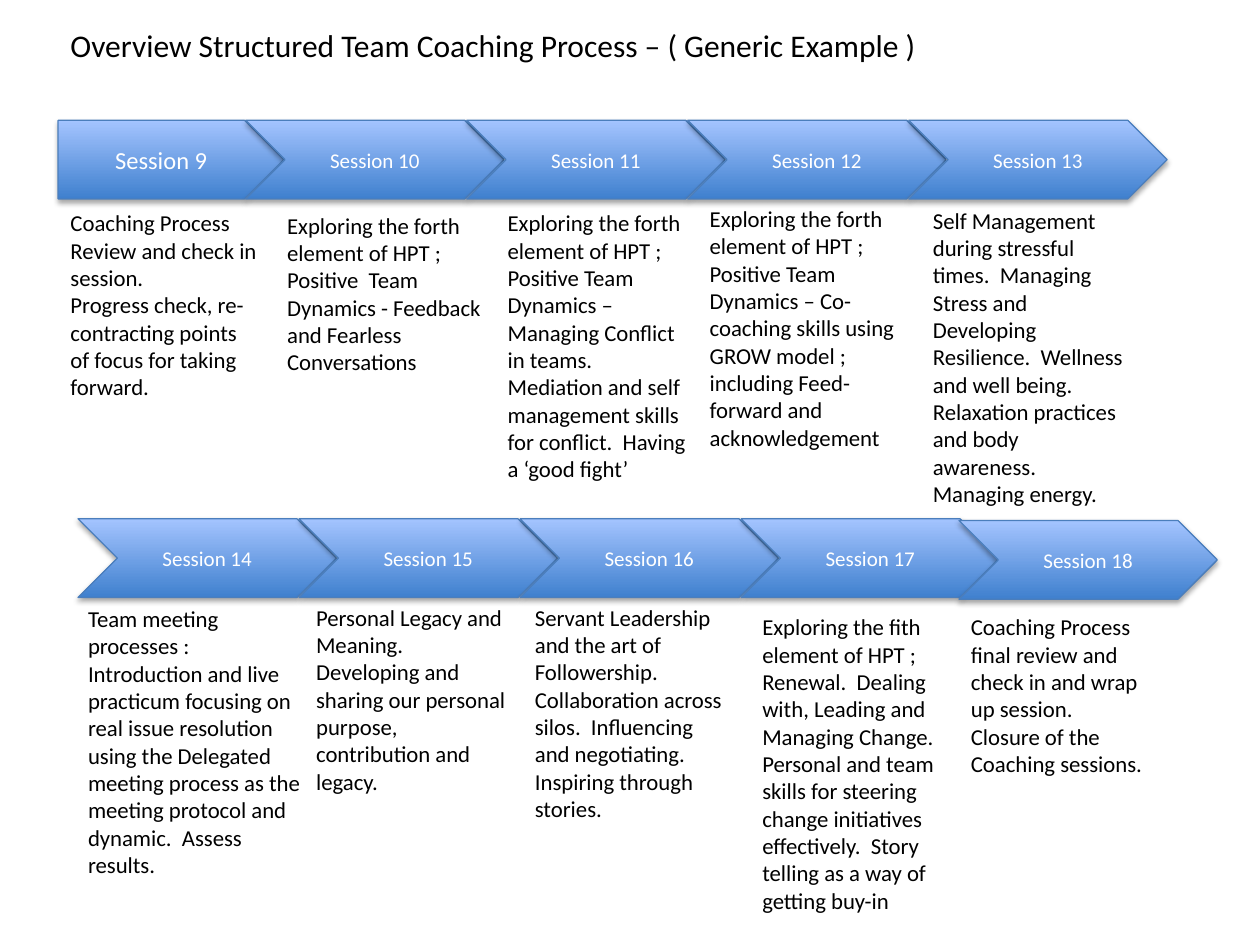
from pptx import Presentation
from pptx.dml.color import RGBColor
from pptx.enum.shapes import MSO_SHAPE
from pptx.enum.text import MSO_ANCHOR, PP_ALIGN
from pptx.oxml import parse_xml
from pptx.oxml.ns import nsdecls
from pptx.util import Pt

COLORS = {"dark": "3F80CE", "light": "A4C4FF", "edge": "4B7EBC",
          "text": "000000", "label": "FFFFFF"}
SHADOW = (
    f'<a:effectLst {nsdecls("a")}>'
    '<a:outerShdw blurRad="39400" dist="22900" dir="5400000" rotWithShape="0">'
    '<a:srgbClr val="000000"><a:alpha val="35000"/></a:srgbClr>'
    '</a:outerShdw></a:effectLst>')


def write(frame, lines, size, color, align=PP_ALIGN.LEFT):
    """Fill a text frame with one paragraph per line."""
    for i, line in enumerate(lines):
        para = frame.paragraphs[0] if i == 0 else frame.add_paragraph()
        para.alignment = align
        run = para.add_run()
        run.text = line
        run.font.name = "Calibri"
        run.font.size = Pt(size)
        run.font.color.rgb = RGBColor.from_string(COLORS[color])


def add_arrow(kind, left, top, width, label, size):
    arrow = slide.shapes.add_shape(kind, Pt(left), Pt(top), Pt(width), Pt(HIGH))
    arrow.fill.gradient()
    arrow.fill.gradient_angle = 90
    for stop, name in zip(arrow.fill.gradient_stops, ("dark", "light")):
        stop.color.rgb = RGBColor.from_string(COLORS[name])
    arrow.line.color.rgb = RGBColor.from_string(COLORS["edge"])
    arrow.line.width = Pt(0.75)
    arrow._element.spPr.append(parse_xml(SHADOW))
    arrow.text_frame.word_wrap = True
    arrow.text_frame.vertical_anchor = MSO_ANCHOR.MIDDLE
    write(arrow.text_frame, [label], size, "label", PP_ALIGN.CENTER)


prs = Presentation()
prs.slide_width, prs.slide_height = Pt(720), Pt(540)
slide = prs.slides.add_slide(prs.slide_layouts[6])

title = slide.shapes.add_textbox(Pt(33.2), Pt(11.5), Pt(510), Pt(29))
title.text_frame.word_wrap = False
write(title.text_frame,
      ["Overview Structured Team Coaching Process – ( Generic Example )"],
      18, "text")

# Session arrows: two rows with the same step
WIDE, HIGH, STEP = 147.6, 44.9, 126.3
add_arrow(MSO_SHAPE.PENTAGON, 33.2, 68.8, 129, "Session 9", 14)
for i in range(4):
    add_arrow(MSO_SHAPE.CHEVRON, 140.4 + i * STEP, 68.8, WIDE,
              f"Session {10 + i}", 12)
for i in range(4):
    add_arrow(MSO_SHAPE.CHEVRON, 44.6 + i * STEP, 296.5, WIDE,
              f"Session {14 + i}", 12)
add_arrow(MSO_SHAPE.CHEVRON, 548, 297.5, WIDE, "Session 18", 12)

# Notes under the arrows: left, top, width, height, paragraphs
notes = [
    (33.2, 116, 121, 117,
     ["Coaching Process Review and check in session.",
      "Progress check, re-contracting points of focus for taking forward."]),
    (157, 117.2, 130.3, 101.5,
     ["Exploring the forth element of HPT ; Positive  Team Dynamics - "
      "Feedback and Fearless Conversations"]),
    (283, 116, 118, 181,
     ["Exploring the forth element of HPT ;  Positive Team Dynamics – "
      "Managing Conflict in teams.  Mediation and self management skills "
      "for conflict.  Having a ‘good fight’"]),
    (398.5, 113.5, 124.6, 149,
     ["Exploring the forth element of HPT ; Positive Team Dynamics – "
      "Co-coaching skills using GROW model ; including Feed-forward and "
      "acknowledgement"]),
    (526, 114.5, 124.6, 181,
     ["Self Management during stressful times.  Managing Stress and "
      "Developing Resilience.  Wellness and well being.  Relaxation "
      "practices and body awareness.  Managing energy."]),
    (43.2, 342, 138.2, 165,
     ["Team meeting processes : Introduction and live practicum focusing on "
      "real issue resolution using the Delegated meeting process as the "
      "meeting protocol and dynamic.  Assess results."]),
    (173.6, 341.3, 124.6, 117,
     ["Personal Legacy and Meaning.  Developing and sharing our personal "
      "purpose, contribution and legacy."]),
    (298.6, 341.3, 124.6, 133,
     ["Servant Leadership and the art of Followership.  Collaboration across "
      "silos.  Influencing and negotiating.  Inspiring through stories."]),
    (428.5, 346.8, 130.3, 181,
     ["Exploring the fith element of HPT ; Renewal.  Dealing with, Leading "
      "and Managing Change.  Personal and team skills for steering change "
      "initiatives effectively.  Story telling as a way of getting buy-in"]),
    (547.7, 346.8, 121, 101.5,
     ["Coaching Process final review and check in and wrap up session.",
      "Closure of the Coaching sessions."]),
]
for left, top, width, height, lines in notes:
    note = slide.shapes.add_textbox(Pt(left), Pt(top), Pt(width), Pt(height))
    note.text_frame.word_wrap = True
    write(note.text_frame, lines, 13, "text")

prs.save("out.pptx")
